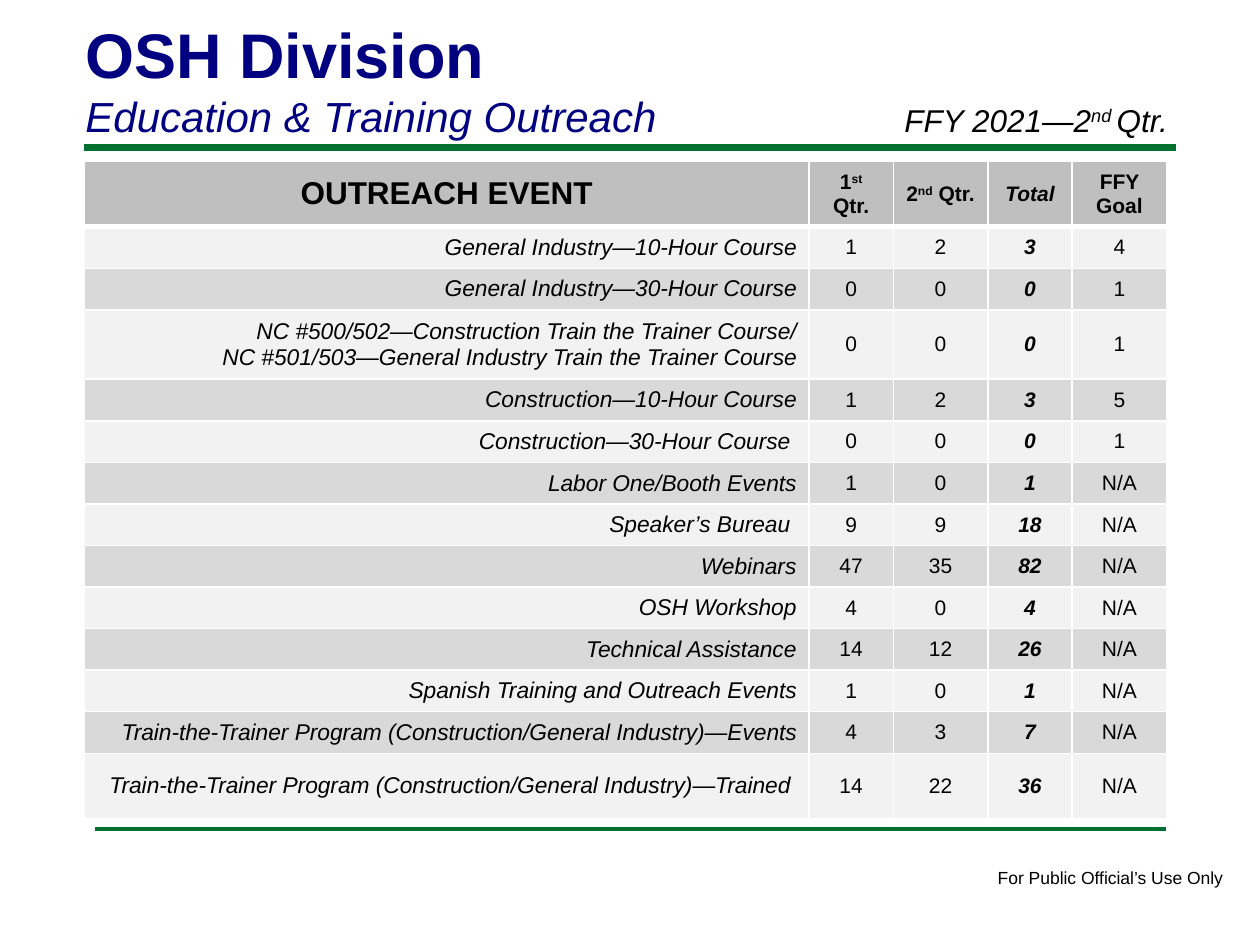
"""Build the OSH Division education and training outreach slide."""
from lxml import etree
from pptx import Presentation
from pptx.dml.color import RGBColor
from pptx.enum.shapes import MSO_CONNECTOR
from pptx.enum.text import MSO_ANCHOR, MSO_AUTO_SIZE, PP_ALIGN
from pptx.oxml.ns import qn
from pptx.util import Inches, Pt

LEFT, CENTER, RIGHT = PP_ALIGN.LEFT, PP_ALIGN.CENTER, PP_ALIGN.RIGHT
TOP, MIDDLE, BOTTOM = MSO_ANCHOR.TOP, MSO_ANCHOR.MIDDLE, MSO_ANCHOR.BOTTOM
STRAIGHT = MSO_CONNECTOR.STRAIGHT
FIT_SHAPE = MSO_AUTO_SIZE.SHAPE_TO_FIT_TEXT

FONT = "Arial"
BLACK = RGBColor(0x00, 0x00, 0x00)
WHITE = RGBColor(0xFF, 0xFF, 0xFF)
NAVY = RGBColor(0x00, 0x00, 0x80)
GREEN = RGBColor(0x00, 0x70, 0x30)
HEADER_FILL = RGBColor(0xBF, 0xBF, 0xBF)
BAND_FILLS = [RGBColor(0xF2, 0xF2, 0xF2), RGBColor(0xD9, 0xD9, 0xD9)]

RULES = [(0.67, 9.33, 1.17, 4), (0.75, 9.25, 6.58, 2)]
COL_WIDTHS = [5.75, 0.67, 0.75, 0.67, 0.75]
ROW_HEIGHT = 0.33
TALL_ROWS = {0: 0.52, 3: 0.55, 13: 0.52}
HEADERS = [
    ["OUTREACH EVENT"],
    ["1", "st", " Qtr."],
    ["2", "nd", " Qtr."],
    ["Total"],
    ["FFY Goal"],
]
EVENTS = [
    ("General Industry—10-Hour Course", 1, 2, 3, 4),
    ("General Industry—30-Hour Course", 0, 0, 0, 1),
    ("NC #500/502—Construction Train the Trainer Course/\n"
     "NC #501/503—General Industry Train the Trainer Course", 0, 0, 0, 1),
    ("Construction—10-Hour Course", 1, 2, 3, 5),
    ("Construction—30-Hour Course ", 0, 0, 0, 1),
    ("Labor One/Booth Events", 1, 0, 1, "N/A"),
    ("Speaker’s Bureau ", 9, 9, 18, "N/A"),
    ("Webinars", 47, 35, 82, "N/A"),
    ("OSH Workshop", 4, 0, 4, "N/A"),
    ("Technical Assistance", 14, 12, 26, "N/A"),
    ("Spanish Training and Outreach Events", 1, 0, 1, "N/A"),
    ("Train-the-Trainer Program (Construction/General Industry)—Events", 4, 3, 7, "N/A"),
    ("Train-the-Trainer Program (Construction/General Industry)—Trained ", 14, 22, 36, "N/A"),
]
TOTAL_COL = 3


def add_runs(p, parts, size, color=BLACK, bold=False, italic=False, align=LEFT):
    """Add runs to a paragraph, raising every second one."""
    p.alignment = align
    for i, text in enumerate(parts):
        r = p.add_run()
        r.text = text
        r.font.name, r.font.size = FONT, Pt(size)
        r.font.bold, r.font.italic = bold, italic
        r.font.color.rgb = color
        if i % 2:
            r.font._element.set("baseline", "30000")


def add_text(s, box, anchor=TOP, wrap=True):
    """Add a text box and return its text frame."""
    tf = s.shapes.add_textbox(*map(Inches, box)).text_frame
    tf.word_wrap = wrap
    tf.auto_size = FIT_SHAPE
    tf.vertical_anchor = anchor
    return tf


def add_rule(s, x1, x2, y, width):
    """Add a horizontal green rule."""
    line = s.shapes.add_connector(STRAIGHT, Inches(x1), Inches(y), Inches(x2), Inches(y))
    line.line.color.rgb = GREEN
    line.line.width = Pt(width)
    etree.SubElement(line._element.spPr, qn("a:effectLst"))


def style_cell(cell, fill, top, bottom):
    """Set a cell's white borders, fill and anchor."""
    tc_pr = cell._tc.get_or_add_tcPr()
    for side, width in (("L", 1), ("R", 1), ("T", top), ("B", bottom)):
        ln = etree.SubElement(tc_pr, qn("a:ln" + side), w=str(Pt(width)))
        solid = etree.SubElement(ln, qn("a:solidFill"))
        etree.SubElement(solid, qn("a:srgbClr"), val=str(WHITE))
    cell.fill.solid()
    cell.fill.fore_color.rgb = fill
    cell.vertical_anchor = MIDDLE


def add_outreach_table(s):
    """Add the table of outreach events."""
    heights = [TALL_ROWS.get(i, ROW_HEIGHT) for i in range(len(EVENTS) + 1)]
    table = s.shapes.add_table(
        len(heights), len(COL_WIDTHS), Inches(0.67), Inches(1.28),
        Inches(sum(COL_WIDTHS)), Inches(sum(heights))).table
    for col, width in zip(table.columns, COL_WIDTHS):
        col.width = Inches(width)
    for row, height in zip(table.rows, heights):
        row.height = Inches(height)
    for c, parts in enumerate(HEADERS):
        cell = table.cell(0, c)
        style_cell(cell, HEADER_FILL, 1, 3)
        add_runs(cell.text_frame.paragraphs[0], parts, 12 if c else 18,
                 bold=True, italic=c == TOTAL_COL, align=CENTER)
    for n, event in enumerate(EVENTS):
        for c, value in enumerate(event):
            cell = table.cell(n + 1, c)
            style_cell(cell, BAND_FILLS[n % 2], 1 if n else 3, 1)
            tf = cell.text_frame
            for i, text in enumerate(str(value).split("\n")):
                p = tf.add_paragraph() if i else tf.paragraphs[0]
                add_runs(p, [text], 12 if c else 13, bold=c == TOTAL_COL,
                         italic=c in (0, TOTAL_COL), align=CENTER if c else RIGHT)


def main():
    """Build and save the slide."""
    prs = Presentation()
    prs.slide_width, prs.slide_height = Inches(10), Inches(7.5)
    s = prs.slides.add_slide(prs.slide_layouts[6])
    for rule in RULES:
        add_rule(s, *rule)
    tf = add_text(s, (7.82, 6.83, 2.01, 0.27), wrap=False)
    add_runs(tf.paragraphs[0], ["For Public Official’s Use Only"], 10)
    tf = add_text(s, (0.58, 0.06, 8.25, 1.11), BOTTOM)
    add_runs(tf.paragraphs[0], ["OSH Division"], 36, NAVY, bold=True)
    add_runs(tf.add_paragraph(), ["Education & Training Outreach"], 24, NAVY, italic=True)
    add_outreach_table(s)
    tf = add_text(s, (7.08, 0.75, 2.5, 0.4))
    add_runs(tf.paragraphs[0], ["FFY 2021—2", "nd ", "Qtr."], 18, italic=True)
    prs.save("out.pptx")


if __name__ == "__main__":
    main()
